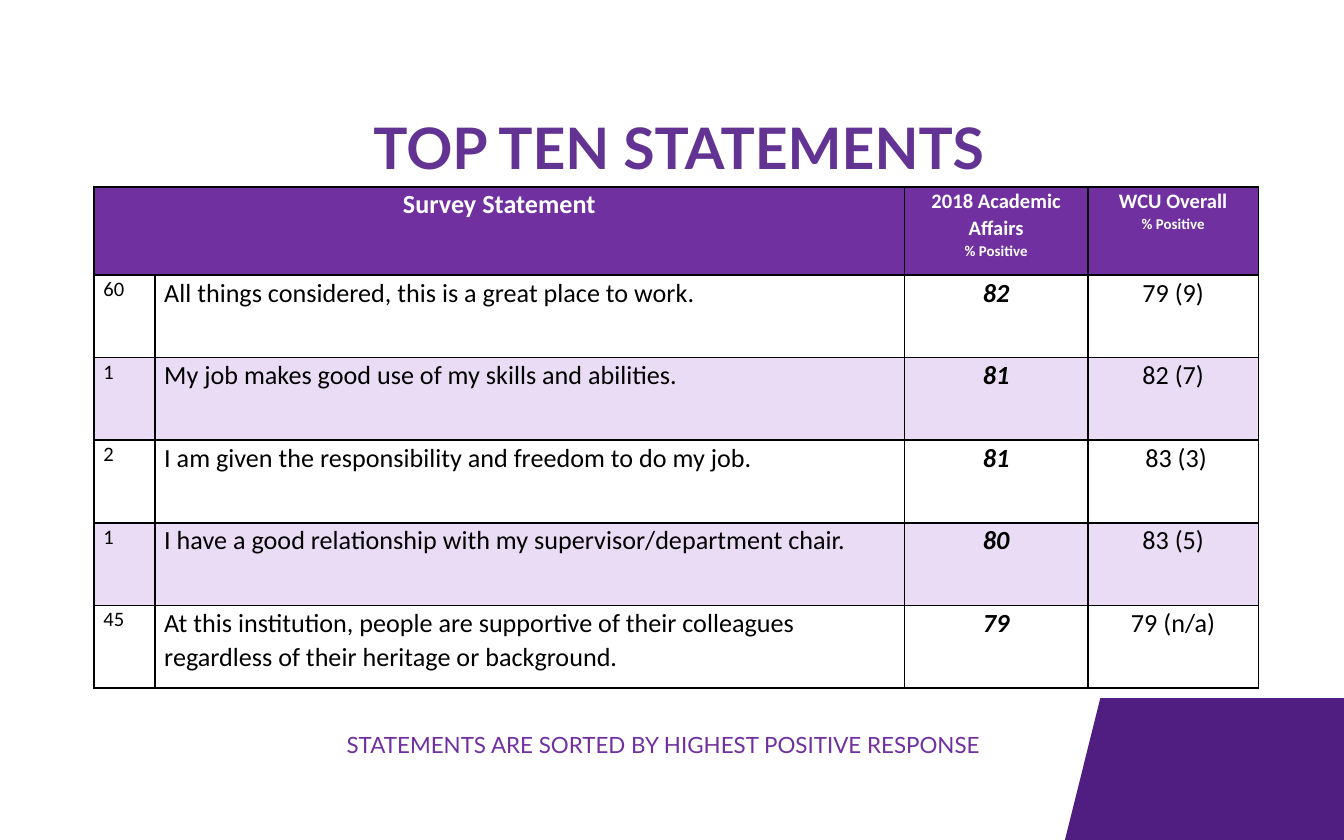
from dataclasses import dataclass

from lxml.etree import SubElement
from pptx import Presentation
from pptx.dml.color import RGBColor as RGB
from pptx.enum.text import MSO_ANCHOR as Anchor, MSO_AUTO_SIZE as AutoSize, PP_ALIGN as Align
from pptx.oxml.ns import qn
from pptx.util import Pt


@dataclass(frozen=True)
class Theme:
    title: str = "623393"
    purple: str = "7030A0"
    corner: str = "4F1E80"
    band: str = "EADCF4"
    white: str = "FFFFFF"
    black: str = "000000"
    heading_font: str = "Lato"
    table_font: str = "Calibri"
    title_size: float = 30.6
    caption_size: float = 12
    body_size: float = 14
    small_size: float = 11
    note_size: float = 8


theme = Theme()


def style(paragraph, font_name, size, color, align=Align.LEFT, spacing=1.07, bold=False, italic=False):
    paragraph.alignment = align
    paragraph.line_spacing = spacing
    for run in paragraph.runs:
        font = run.font
        font.name, font.size, font.bold, font.italic = font_name, Pt(size), bold, italic
        font.color.rgb = RGB.from_string(color)


def format_cell(cell, fill):
    cell.margin_left = cell.margin_right = Pt(5)
    cell.margin_top = cell.margin_bottom = 0
    properties = cell._tc.get_or_add_tcPr()
    for side in ("a:lnL", "a:lnR", "a:lnT", "a:lnB"):
        line = SubElement(properties, qn(side), w=str(Pt(1)))
        SubElement(SubElement(line, qn("a:solidFill")), qn("a:srgbClr"), val=theme.black)
    if fill:
        cell.fill.solid()
        cell.fill.fore_color.rgb = RGB.from_string(fill)
    else:
        cell.fill.background()


presentation = Presentation()
presentation.slide_width, presentation.slide_height = Pt(720), Pt(450)
slide = presentation.slides.add_slide(presentation.slide_layouts[5])

# Corner shape
builder = slide.shapes.build_freeform(Pt(589.5), Pt(374))
builder.add_line_segments([(Pt(720), Pt(374)), (Pt(720), Pt(450)), (Pt(570.5), Pt(450))])
corner = builder.convert_to_shape()
corner.shadow.inherit = False
corner.fill.solid()
corner.fill.fore_color.rgb = RGB.from_string(theme.corner)
corner.line.fill.background()

# Title
title = slide.shapes.title
title.left, title.top, title.width, title.height = Pt(28.8), Pt(40.3), Pt(669.6), Pt(82.8)
title.text_frame.text = "TOP TEN STATEMENTS"
title.text_frame.auto_size = AutoSize.NONE
title.text_frame.vertical_anchor = Anchor.MIDDLE
style(title.text_frame.paragraphs[0], theme.heading_font, theme.title_size, theme.title,
      Align.CENTER, Pt(30), bold=True)

# Survey table
header = ["Survey Statement", "", "2018 Academic Affairs\n% Positive", "WCU Overall\n% Positive"]
statements = [
    ("60", "All things considered, this is a great place to work.", "82", "79 (9)"),
    ("1", "My job makes good use of my skills and abilities.", "81", "82 (7)"),
    ("2", "I am given the responsibility and freedom to do my job.", "81", " 83 (3)"),
    ("1", "I have a good relationship with my supervisor/department chair.", "80", "83 (5)"),
    ("45", "At this institution, people are supportive of their colleagues "
           "regardless of their heritage or background.", "79", "79 (n/a)"),
]
column_widths = [32.6, 401.6, 98.2, 91.4]
header_height, row_height = 47.3, 44.25
table = slide.shapes.add_table(
    len(statements) + 1, len(column_widths), Pt(50.4), Pt(100.1),
    Pt(sum(column_widths)), Pt(header_height + row_height * len(statements))).table
for column, width in zip(table.columns, column_widths):
    column.width = Pt(width)
for index, row in enumerate(table.rows):
    row.height = Pt(row_height if index else header_height)

# Header row
for index, text in enumerate(header):
    cell = table.cell(0, index)
    cell.text_frame.text = text
    format_cell(cell, theme.purple)
    first_size = theme.small_size if index else theme.body_size
    for paragraph, size in zip(cell.text_frame.paragraphs, (first_size, theme.note_size)):
        style(paragraph, theme.table_font, size, theme.white, Align.CENTER, bold=True)
table.cell(0, 0).merge(table.cell(0, 1))

# Statement rows, every second one shaded
for row_index, values in enumerate(statements, start=1):
    for index, text in enumerate(values):
        cell = table.cell(row_index, index)
        cell.text_frame.text = text
        format_cell(cell, None if row_index % 2 else theme.band)
        style(cell.text_frame.paragraphs[0], theme.table_font,
              theme.body_size if index else theme.small_size, theme.black,
              Align.CENTER if index > 1 else Align.LEFT, bold=index == 2, italic=index == 2)

# Caption
caption = slide.shapes.add_textbox(Pt(178.6), Pt(368.6), Pt(360), Pt(36))
caption.text_frame.word_wrap = True
caption.text_frame.text = "STATEMENTS ARE SORTED BY HIGHEST POSITIVE RESPONSE"
style(caption.text_frame.paragraphs[0], theme.heading_font, theme.caption_size, theme.purple,
      spacing=Pt(34))

presentation.save("out.pptx")
